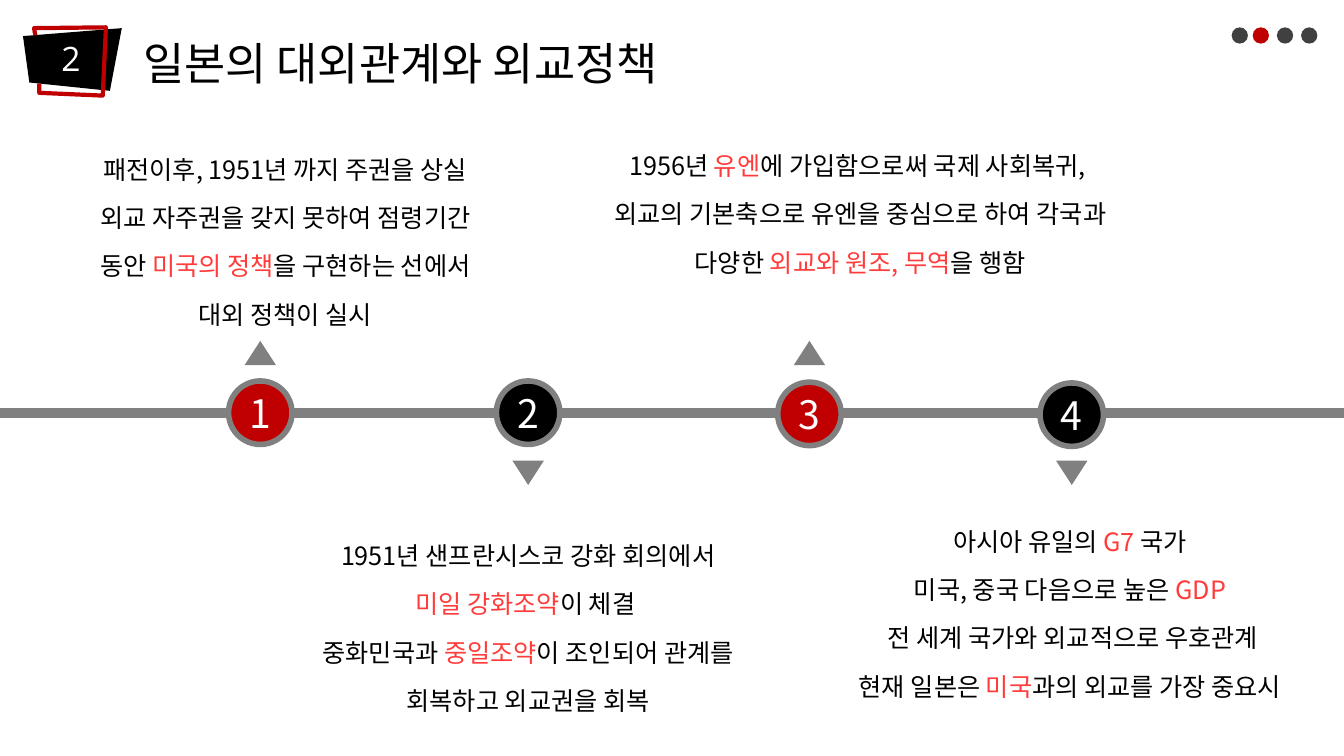
from dataclasses import dataclass
from typing import NamedTuple

import lxml.etree
import pptx
import pptx.dml.color
import pptx.enum.shapes
import pptx.enum.text
import pptx.oxml.ns
import pptx.shapes.autoshape
import pptx.slide
import pptx.text.text
import pptx.util
from pptx.util import Cm

COLORS = {
    "black": "000000",
    "white": "FFFFFF",
    "red": "C00000",
    "accent": "FF3B3B",
    "gray": "808080",
    "dark": "404040",
}
KOREAN_FONT = "Noto Sans CJK KR"
NUMBER_FONT = "Open Sans"
SLIDE_WIDTH = 33.87
AXIS_TOP = 10.41
CIRCLE_SIZE = 1.6
ARROW_WIDTH, ARROW_HEIGHT = 0.79, 0.61
DOT_SIZE = 0.41
BADGE_FILL = [(58, 91), (74, 208), (277, 229), (307, 71)]
BADGE_OUTLINE = [(89, 89), (86, 71), (267, 69), (259, 241), (99, 234), (99, 211)]


class Box(NamedTuple):
    left: float
    top: float
    width: float
    height: float


class Span(NamedTuple):
    text: str
    color: str = "black"


@dataclass
class Milestone:
    number: int
    center: float
    circle_top: float
    box: Box
    paragraphs: list[list[Span]]


@dataclass
class Dot:
    left: float
    color: str


MILESTONES = [
    Milestone(1, 6.56, 9.6, Box(1.88, 3.3, 10.62, 5), [
        [Span("패전이후, 1951년 까지 주권을 상실")],
        [Span("외교 자주권을 갖지 못하여 점령기간 동안 "), Span("미국의 정책", "accent"),
         Span("을 구현하는 선에서 대외 정책이 실시")],
    ]),
    Milestone(2, 13.31, 9.6, Box(7.8, 13.03, 11.02, 5), [
        [Span("1951년 샌프란시스코 강화 회의에서 "), Span("미일 강화조약", "accent"),
         Span("이 체결 ")],
        [Span("중화민국과 "), Span("중일조약", "accent"),
         Span("이 조인되어 관계를 회복하고 외교권을 회복")],
    ]),
    Milestone(3, 20.4, 9.63, Box(14.76, 3.2, 13.84, 3.78), [
        [Span("1956년 "), Span("유엔", "accent"), Span("에 가입함으로써 국제 사회복귀, ")],
        [Span("외교의 기본축으로 유엔을 중심으로 하여 각국과 다양한 "),
         Span("외교와 원조, 무역", "accent"), Span("을 행함")],
    ]),
    Milestone(4, 27.01, 9.65, Box(20.93, 12.67, 12.07, 5), [
        [Span("아시아 유일의 "), Span("G7 ", "accent"), Span("국가")],
        [Span("미국, 중국 다음으로 높은 "), Span("GDP", "accent")],
        [Span(" 전 세계 국가와 외교적으로 우호관계")],
        [Span("현재 일본은 "), Span("미국", "accent"), Span("과의 외교를 가장 중요시")],
    ]),
]
DOTS = [Dot(31.04, "dark"), Dot(31.57, "red"), Dot(32.18, "dark"), Dot(32.79, "dark")]


def rgb(name: str) -> pptx.dml.color.RGBColor:
    return pptx.dml.color.RGBColor.from_string(COLORS[name])


def add_run(paragraph: pptx.text.text._Paragraph, span: Span, size: float,
            font_name: str = KOREAN_FONT) -> None:
    run = paragraph.add_run()
    run.text = span.text
    run.font.size = pptx.util.Pt(size)
    run.font.color.rgb = rgb(span.color)
    run.font.name = font_name
    properties = run._r.get_or_add_rPr()
    east_asian = lxml.etree.SubElement(properties, pptx.oxml.ns.qn("a:ea"))
    east_asian.set("typeface", font_name)


def paint(shape: pptx.shapes.autoshape.Shape, fill: str | None,
          line: str | None = None, line_width: float = 0) -> None:
    shape.shadow.inherit = False
    if fill:
        shape.fill.solid()
        shape.fill.fore_color.rgb = rgb(fill)
    else:
        shape.fill.background()
    if line:
        shape.line.color.rgb = rgb(line)
        shape.line.width = pptx.util.Pt(line_width)
    else:
        shape.line.fill.background()


def add_preset(slide: pptx.slide.Slide, kind: pptx.enum.shapes.MSO_SHAPE, box: Box,
               fill: str, line: str | None = None,
               line_width: float = 0) -> pptx.shapes.autoshape.Shape:
    shape = slide.shapes.add_shape(kind, *map(Cm, box))
    paint(shape, fill, line, line_width)
    return shape


def add_outline(slide: pptx.slide.Slide, points: list[tuple[int, int]], closed: bool,
                fill: str | None, line: str | None = None) -> None:
    builder = slide.shapes.build_freeform(*points[0], scale=Cm(0.01))
    builder.add_line_segments(points[1:], close=closed)
    paint(builder.convert_to_shape(), fill, line, 3)


def add_title(slide: pptx.slide.Slide, text: str, box: Box) -> None:
    title = slide.shapes.title
    title.left, title.top, title.width, title.height = map(Cm, box)
    frame = title.text_frame
    frame.auto_size = pptx.enum.text.MSO_AUTO_SIZE.SHAPE_TO_FIT_TEXT
    frame.vertical_anchor = pptx.enum.text.MSO_ANCHOR.TOP
    frame.paragraphs[0].alignment = pptx.enum.text.PP_ALIGN.LEFT
    add_run(frame.paragraphs[0], Span(text), 32)


def add_text_frame(slide: pptx.slide.Slide, box: Box,
                   wrap: bool) -> pptx.text.text.TextFrame:
    frame = slide.shapes.add_textbox(*map(Cm, box)).text_frame
    frame.word_wrap = wrap
    frame.auto_size = pptx.enum.text.MSO_AUTO_SIZE.SHAPE_TO_FIT_TEXT
    return frame


def add_axis(slide: pptx.slide.Slide) -> None:
    axis = slide.shapes.add_connector(
        pptx.enum.shapes.MSO_CONNECTOR.STRAIGHT,
        Cm(0), Cm(AXIS_TOP), Cm(SLIDE_WIDTH), Cm(AXIS_TOP))
    axis.line.color.rgb = rgb("gray")
    axis.line.width = pptx.util.Pt(7)
    lxml.etree.SubElement(axis._element.spPr, pptx.oxml.ns.qn("a:effectLst"))


def add_milestone(slide: pptx.slide.Slide, milestone: Milestone) -> None:
    above = milestone.number % 2 == 1
    circle = add_preset(
        slide, pptx.enum.shapes.MSO_SHAPE.OVAL,
        Box(milestone.center - CIRCLE_SIZE / 2, milestone.circle_top, CIRCLE_SIZE, CIRCLE_SIZE),
        "red" if above else "black", "gray", 4)
    circle.text_frame.vertical_anchor = pptx.enum.text.MSO_ANCHOR.MIDDLE
    label = circle.text_frame.paragraphs[0]
    label.alignment = pptx.enum.text.PP_ALIGN.CENTER
    add_run(label, Span(str(milestone.number), "white"), 28)

    arrow = add_preset(
        slide, pptx.enum.shapes.MSO_SHAPE.ISOSCELES_TRIANGLE,
        Box(milestone.center - ARROW_WIDTH / 2, 8.59 if above else 11.61,
            ARROW_WIDTH, ARROW_HEIGHT), "gray")
    arrow.rotation = 0 if above else 180

    frame = add_text_frame(slide, milestone.box, True)
    for index, spans in enumerate(milestone.paragraphs):
        paragraph = frame.add_paragraph() if index else frame.paragraphs[0]
        paragraph.alignment = pptx.enum.text.PP_ALIGN.CENTER
        paragraph.line_spacing = 1.6
        for span in spans:
            add_run(paragraph, span, 18)


def main() -> None:
    presentation = pptx.Presentation()
    presentation.slide_width = Cm(SLIDE_WIDTH)
    presentation.slide_height = Cm(19.05)
    slide = presentation.slides.add_slide(presentation.slide_layouts.get_by_name("Title Only"))
    add_title(slide, "일본의 대외관계와 외교정책", Box(3.35, 0.76, 15.62, 1.63))
    add_outline(slide, BADGE_FILL, True, "black")
    add_outline(slide, BADGE_OUTLINE, False, None, "red")
    badge = add_text_frame(slide, Box(1.3, 0.84, 0.97, 1.27), False)
    add_run(badge.paragraphs[0], Span("2", "white"), 24, NUMBER_FONT)
    for dot in DOTS:
        add_preset(slide, pptx.enum.shapes.MSO_SHAPE.OVAL,
                   Box(dot.left, 0.69, DOT_SIZE, DOT_SIZE), dot.color)
    add_axis(slide)
    for milestone in MILESTONES:
        add_milestone(slide, milestone)
    presentation.save("out.pptx")


if __name__ == "__main__":
    main()
